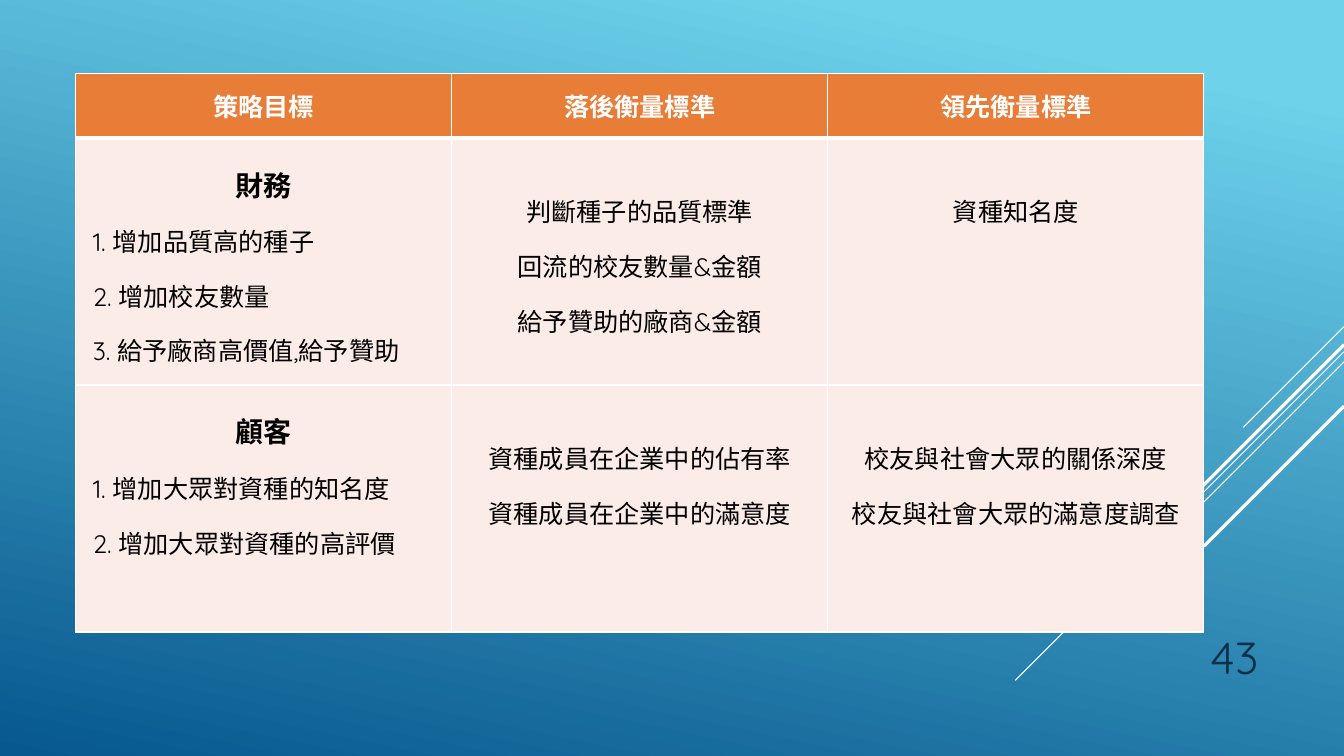
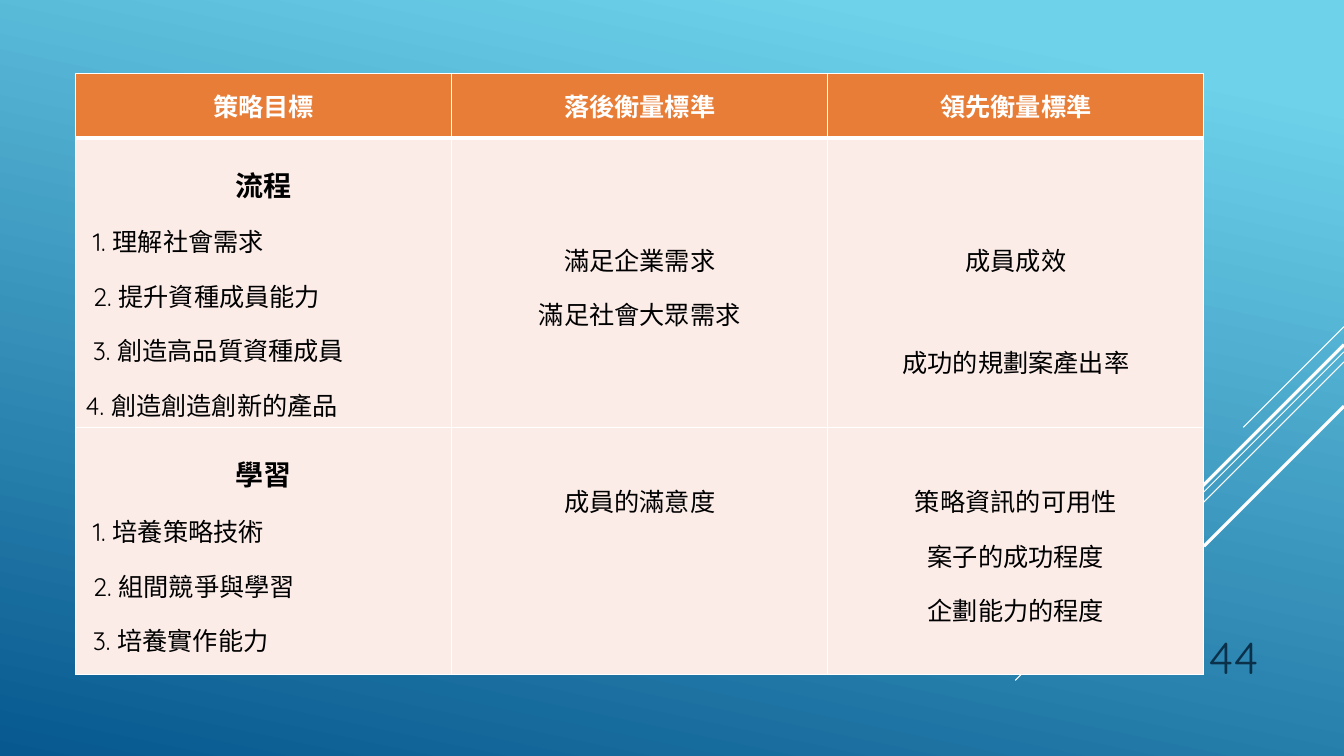
from lxml import etree
from pptx import Presentation
from pptx.dml.color import RGBColor
from pptx.enum.shapes import MSO_CONNECTOR
from pptx.enum.text import MSO_ANCHOR, PP_ALIGN
from pptx.oxml.ns import qn
from pptx.util import Inches, Pt

FONT = "Quicksand"
WHITE, BLACK, NAVY = "FFFFFF", "000000", "0A304A"
ORANGE, BLUSH = "E87D37", "FBECE8"
SKY, OCEAN = "6ED2EB", "06588E"

HEADERS = ["策略目標", "落後衡量標準", "領先衡量標準"]
COLUMN_WIDTH = 3.73
HEADER_HEIGHT = 0.64
BLANK_LINE = 0.48
NUMBER_INDENT = 0.07

# Diagonal lines: start y at the right edge, horizontal run, width in points
DIAGONALS = [(3.24, 1.00, 0.75), (3.49, 3.26, 0.75), (3.59, 2.07, 0.75),
             (3.42, 1.91, 2.25), (4.03, 1.39, 2.25)]

# Each row: height, heading, numbered goals, lines skipped above the measures,
# lagging measures, leading measures
SLIDES = [
    ("43", [
        (2.45, "財務", ["1. 增加品質高的種子", "2. 增加校友數量", "3. 給予廠商高價值,給予贊助"], 1,
         ["判斷種子的品質標準", "回流的校友數量&金額", "給予贊助的廠商&金額"], ["資種知名度"]),
        (2.45, "顧客", ["1. 增加大眾對資種的知名度", "2. 增加大眾對資種的高評價"], 1,
         ["資種成員在企業中的佔有率", "資種成員在企業中的滿意度"],
         ["校友與社會大眾的關係深度", "校友與社會大眾的滿意度調查"]),
    ]),
    ("44", [
        (2.65, "流程", ["1. 理解社會需求", "2. 提升資種成員能力", "3. 創造高品質資種成員",
                      "4. 創造創造創新的產品"], 2,
         ["滿足企業需求", "滿足社會大眾需求"], ["成員成效", "成功的規劃案產出率"]),
        (2.45, "學習", ["1. 培養策略技術", "2. 組間競爭與學習", "3. 培養實作能力"], 1,
         ["成員的滿意度"], ["策略資訊的可用性", "案子的成功程度", "企劃能力的程度"]),
    ]),
]


def color(value):
    return RGBColor.from_string(value)


def style_cell(cell, text, fill, font_color, bottom_width=1):
    """Fill the cell, draw its white borders and set its text."""
    properties = cell._tc.get_or_add_tcPr()
    for side, width in (("L", 1), ("R", 1), ("T", 1), ("B", bottom_width)):
        border = etree.SubElement(properties, qn(f"a:ln{side}"), w=str(Pt(width)))
        solid = etree.SubElement(border, qn("a:solidFill"))
        etree.SubElement(solid, qn("a:srgbClr"), val=WHITE)
    cell.fill.solid()
    cell.fill.fore_color.rgb = color(fill)
    cell.text_frame.text = text
    for paragraph in cell.text_frame.paragraphs:
        paragraph.alignment = PP_ALIGN.CENTER
        for run in paragraph.runs:
            run.font.name = FONT
            run.font.size = Pt(18)
            run.font.bold = False
            run.font.color.rgb = color(font_color)


presentation = Presentation()
presentation.slide_width = Inches(13.33)
presentation.slide_height = Inches(7.5)

# Shared background on the master
background = presentation.slide_master.background.fill
background.gradient()
background.gradient_angle = 258
for stop, (position, value) in zip(background.gradient_stops, ((0.1, SKY), (1, OCEAN))):
    stop.position = position
    stop.color.rgb = color(value)

for number, rows in SLIDES:
    slide = presentation.slides.add_slide(presentation.slide_layouts[6])

    # Diagonal lines
    for top, run_length, width in DIAGONALS:
        line = slide.shapes.add_connector(
            MSO_CONNECTOR.STRAIGHT, Inches(13.33), Inches(top),
            Inches(13.33 - run_length), Inches(top + run_length))
        line.line.color.rgb = color(WHITE)
        line.line.width = Pt(width)
        etree.SubElement(line._element.spPr, qn("a:effectLst"))

    # Table and header row
    heights = [HEADER_HEIGHT] + [row[0] for row in rows]
    table = slide.shapes.add_table(
        len(heights), len(HEADERS), Inches(0.75), Inches(0.73),
        Inches(COLUMN_WIDTH * len(HEADERS)), Inches(sum(heights))).table
    table.horz_banding = False
    for column, header in enumerate(HEADERS):
        table.columns[column].width = Inches(COLUMN_WIDTH)
        cell = table.cell(0, column)
        style_cell(cell, header, ORANGE, WHITE, bottom_width=3)
        cell.vertical_anchor = MSO_ANCHOR.MIDDLE
        cell.text_frame.paragraphs[0].runs[0].font.bold = True
    for table_row, height in zip(table.rows, heights):
        table_row.height = Inches(height)

    # Goals and measures
    for index, (_, heading, goals, skipped, lagging, leading) in enumerate(rows, 1):
        for column, lines in enumerate(([heading] + goals, lagging, leading)):
            cell = table.cell(index, column)
            style_cell(cell, "\n".join(lines), BLUSH, BLACK)
            for paragraph in cell.text_frame.paragraphs:
                paragraph.line_spacing = 1.5
            if column > 0:
                cell.margin_top = Inches(0.36 + BLANK_LINE * (skipped - 1))
        title, *goal_paragraphs = table.cell(index, 0).text_frame.paragraphs
        title.runs[0].font.size = Pt(20)
        title.runs[0].font.bold = True
        for paragraph in goal_paragraphs:
            paragraph.alignment = PP_ALIGN.LEFT
            indent = 0 if paragraph.text.startswith("4") else NUMBER_INDENT
            paragraph._p.get_or_add_pPr().set("marL", str(Inches(indent)))
        if heading == "流程":
            table.cell(index, 2).text_frame.paragraphs[1].space_before = Pt(34)

    # Slide number
    number_box = slide.shapes.add_textbox(Inches(11.33), Inches(6.1), Inches(1.25), Inches(0.73))
    number_frame = number_box.text_frame
    number_frame.word_wrap = True
    number_frame.vertical_anchor = MSO_ANCHOR.BOTTOM
    number_frame.text = number
    number_frame.paragraphs[0].alignment = PP_ALIGN.RIGHT
    number_font = number_frame.paragraphs[0].runs[0].font
    number_font.name = FONT
    number_font.size = Pt(32)
    number_font.color.rgb = color(NAVY)

presentation.save("out.pptx")
